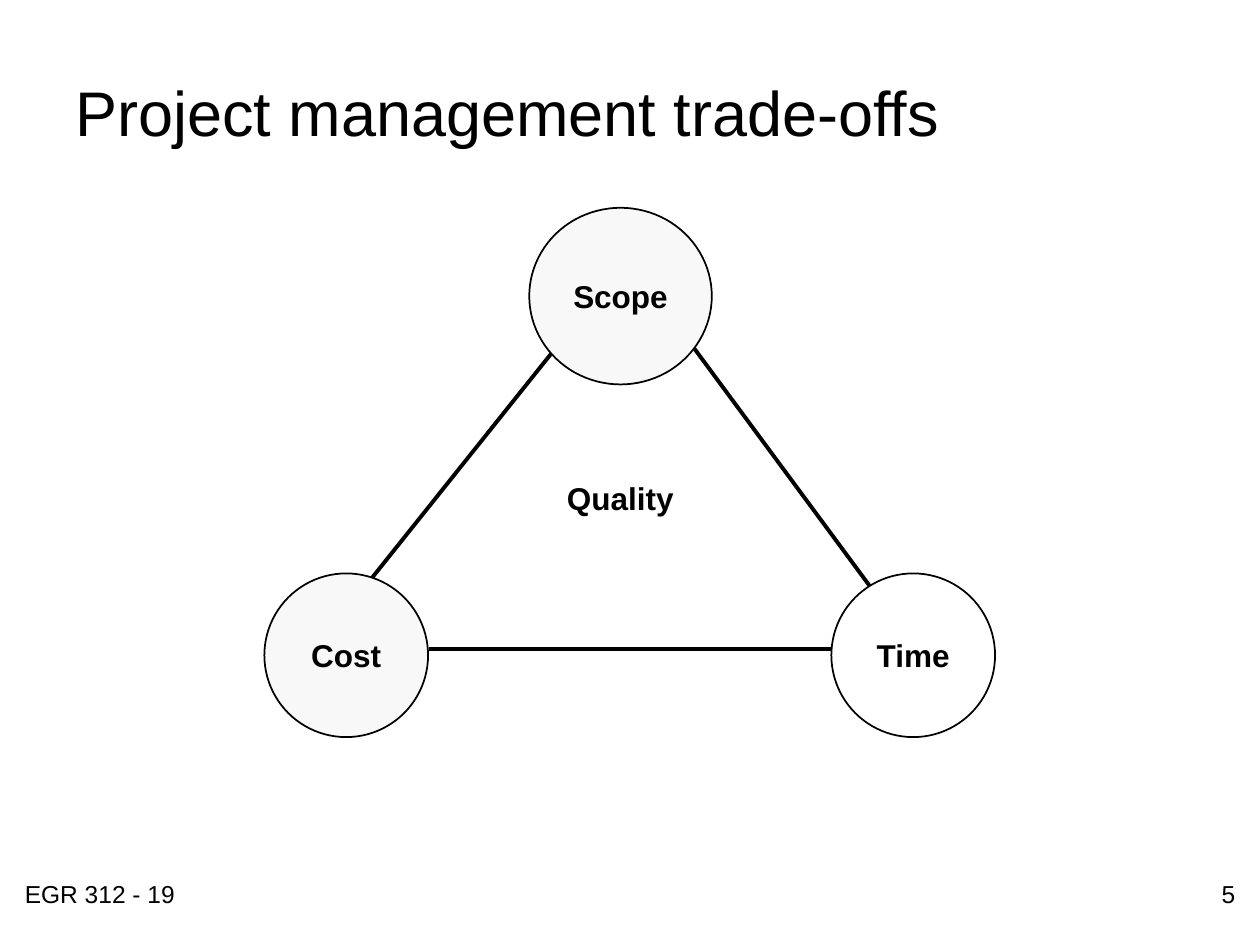
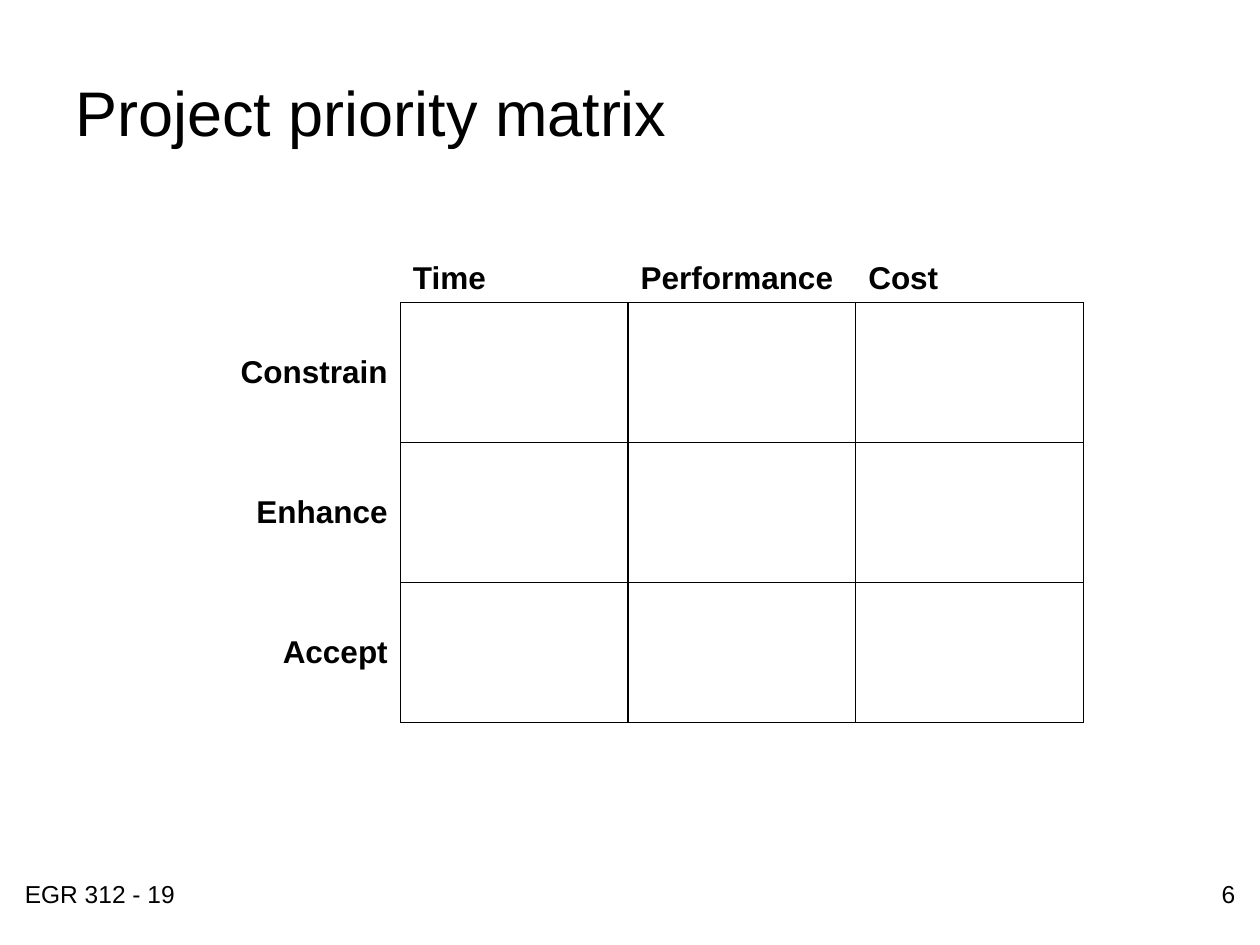
from lxml import etree
from pptx import Presentation
from pptx.dml.color import RGBColor
from pptx.enum.shapes import MSO_CONNECTOR, MSO_SHAPE
from pptx.enum.text import MSO_ANCHOR, PP_ALIGN
from pptx.oxml.ns import qn
from pptx.util import Cm, Pt

LEFT, CENTER, RIGHT = PP_ALIGN.LEFT, PP_ALIGN.CENTER, PP_ALIGN.RIGHT
TOP, MIDDLE, BOTTOM = MSO_ANCHOR.TOP, MSO_ANCHOR.MIDDLE, MSO_ANCHOR.BOTTOM
OVAL, STRAIGHT = MSO_SHAPE.OVAL, MSO_CONNECTOR.STRAIGHT

FONT = "Arial"
COLORS = {"ink": "000000", "paper": "FFFFFF", "shade": "F8F8F8"}
FOOTER = "EGR 312 - 19"
FOOTER_TOP, FOOTER_WIDTH, FOOTER_HEIGHT = 17.6, 5.92, 1.32


def color(name):
    return RGBColor.from_string(COLORS[name])


def write(frame, text, size=18, bold=False, align=LEFT):
    """Put one formatted paragraph into a text frame."""
    para = frame.paragraphs[0]
    para.alignment = align
    span = para.add_run()
    span.text = text
    span.font.name = FONT
    span.font.size = Pt(size)
    span.font.bold = bold
    span.font.color.rgb = color("ink")


def add_text(page, text, left, top, width, height, anchor=TOP, **style):
    box = page.shapes.add_textbox(Cm(left), Cm(top), Cm(width), Cm(height))
    box.text_frame.word_wrap = True
    box.text_frame.vertical_anchor = anchor
    write(box.text_frame, text, **style)


def add_circle(page, text, left, top, width, height, fill):
    circle = page.shapes.add_shape(OVAL, Cm(left), Cm(top), Cm(width), Cm(height))
    circle.shadow.inherit = False
    circle.fill.solid()
    circle.fill.fore_color.rgb = color(fill)
    circle.line.color.rgb = color("ink")
    circle.line.width = Pt(1)
    circle.text_frame.vertical_anchor = MIDDLE
    write(circle.text_frame, text, bold=True, align=CENTER)


def add_side(page, start, end):
    """Draw one side of the triangle between two (x, y) points."""
    side = page.shapes.add_connector(STRAIGHT, *map(Cm, start + end))
    side.line.color.rgb = color("ink")
    side.line.width = Pt(2.25)
    etree.SubElement(side._element.spPr, qn("a:effectLst"))


def set_borders(cell, visible):
    """Show the named edges (L, R, T, B) of a cell and hide the others."""
    properties = cell._tc.get_or_add_tcPr()
    for edge in "LRTB":
        line = etree.SubElement(properties, qn(f"a:ln{edge}"), w=str(Pt(1)))
        if edge in visible:
            fill = etree.SubElement(line, qn("a:solidFill"))
            etree.SubElement(fill, qn("a:srgbClr"), val=COLORS["ink"])
        else:
            etree.SubElement(line, qn("a:noFill"))


def add_matrix(page, left, top, column_names, row_names,
               column_width, header_height, row_height):
    """Draw an empty grid with borderless headings above and to the left."""
    rows, columns = len(row_names) + 1, len(column_names) + 1
    height = header_height + row_height * len(row_names)
    table = page.shapes.add_table(rows, columns, Cm(left), Cm(top),
                                  Cm(column_width * columns), Cm(height)).table
    table.first_row = table.horz_banding = False
    for column in table.columns:
        column.width = Cm(column_width)
    for index, row in enumerate(table.rows):
        row.height = Cm(row_height if index else header_height)

    for r in range(rows):
        for c in range(columns):
            cell = table.cell(r, c)
            if r and c:
                visible = "LRTB"
            elif r:
                visible = "R"
            else:
                visible = "B" if c else ""
            set_borders(cell, visible)
            cell.fill.background()

    for c, name in enumerate(column_names, 1):
        cell = table.cell(0, c)
        cell.vertical_anchor = BOTTOM
        write(cell.text_frame, name, bold=True)
    for r, name in enumerate(row_names, 1):
        cell = table.cell(r, 0)
        cell.vertical_anchor = MIDDLE
        write(cell.text_frame, name, bold=True, align=RIGHT)


def add_page(deck, title, number):
    """Start a page with the shared background, footer and title."""
    page = deck.slides.add_slide(deck.slide_layouts[6])
    page.background.fill.solid()
    page.background.fill.fore_color.rgb = color("paper")
    for text, left, align in ((FOOTER, 0.25, LEFT), (str(number), 19.23, RIGHT)):
        add_text(page, text, left, FOOTER_TOP, FOOTER_WIDTH, FOOTER_HEIGHT,
                 size=14, align=align)
    add_text(page, title, 1.27, 0.79, 22.86, 2.92, anchor=MIDDLE, size=36)
    return page


def build_trade_offs(deck):
    page = add_page(deck, "Project management trade-offs", 5)
    # The sides run under the Scope and Cost circles
    add_circle(page, "Time", 16.76, 11.56, 3.3, 3.3, "paper")
    add_side(page, (8.64, 13.08), (16.76, 13.08))
    add_side(page, (7.37, 11.81), (11.43, 6.73))
    add_side(page, (13.97, 6.99), (17.53, 11.81))
    add_text(page, "Quality", 11.18, 9.53, 2.79, 1.02, bold=True)
    add_circle(page, "Scope", 10.67, 4.19, 3.68, 3.56, "shade")
    add_circle(page, "Cost", 5.33, 11.56, 3.3, 3.3, "shade")


def build_priority_matrix(deck):
    page = add_page(deck, "Project priority matrix", 6)
    add_matrix(page, 3.48, 4.5,
               ("Time", "Performance", "Cost"),
               ("Constrain", "Enhance", "Accept"),
               column_width=4.59, header_height=1.6, row_height=2.82)


def main():
    deck = Presentation()
    deck.slide_width, deck.slide_height = Cm(25.4), Cm(19.05)
    build_trade_offs(deck)
    build_priority_matrix(deck)
    deck.save("out.pptx")


if __name__ == "__main__":
    main()
